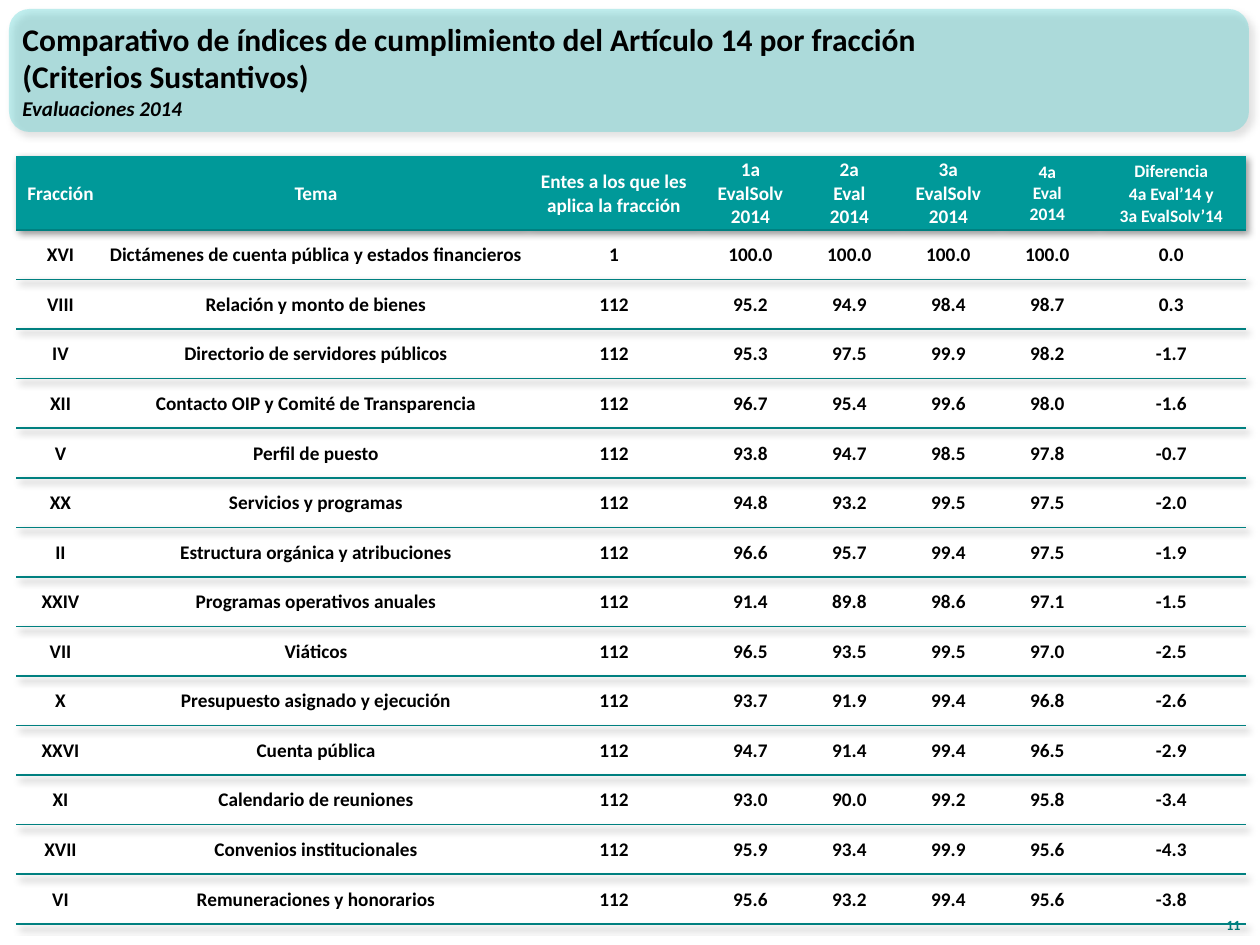
from dataclasses import dataclass

from lxml import etree
from pptx import Presentation
from pptx.dml.color import RGBColor
from pptx.enum.shapes import MSO_SHAPE
from pptx.enum.text import MSO_ANCHOR, PP_ALIGN
from pptx.oxml import parse_xml
from pptx.oxml.ns import nsdecls, qn
from pptx.util import Emu, Pt

SCALE = 914400 / 126  # EMU per px
FONT = "Calibri"
BLACK = RGBColor(0x00, 0x00, 0x00)
WHITE = RGBColor(0xFF, 0xFF, 0xFF)
AQUA = RGBColor(0x33, 0xCC, 0xCC)
TEAL = RGBColor(0x00, 0x99, 0x99)
DARK_TEAL = RGBColor(0x00, 0x80, 0x80)
LEFT, CENTER, RIGHT = PP_ALIGN.LEFT, PP_ALIGN.CENTER, PP_ALIGN.RIGHT
MIDDLE, BOTTOM = MSO_ANCHOR.MIDDLE, MSO_ANCHOR.BOTTOM
ROUND_RECT = MSO_SHAPE.ROUNDED_RECTANGLE
PLAIN_TABLE = "{2D5ABB26-0587-4C30-8999-92F81FD0307C}"


@dataclass(frozen=True)
class Column:
    header: str
    width: int
    size: int = 11
    inset: int = 1
    line_spacing: float | None = None


@dataclass(frozen=True)
class Line:
    text: str
    size: int
    italic: bool = False


COLUMNS = [
    Column("Fracción", 89),
    Column("Tema", 422),
    Column("Entes a los que les aplica la fracción", 174),
    Column("1a\vEvalSolv\v2014", 99),
    Column("2a\vEval\v2014", 99),
    Column("3a\vEvalSolv\v2014", 99),
    Column("4a\vEval\v2014", 99, size=10, inset=9),
    Column("Diferencia\n4a Eval’14 y\n3a EvalSolv’14", 149, size=10, line_spacing=1.07),
]
ROWS = [
    ("XVI", "Dictámenes de cuenta pública y estados financieros",
     "1", "100.0", "100.0", "100.0", "100.0", "0.0"),
    ("VIII", "Relación y monto de bienes", "112", "95.2", "94.9", "98.4", "98.7", "0.3"),
    ("IV", "Directorio de servidores públicos", "112", "95.3", "97.5", "99.9", "98.2", "-1.7"),
    ("XII", "Contacto OIP y Comité de Transparencia",
     "112", "96.7", "95.4", "99.6", "98.0", "-1.6"),
    ("V", "Perfil de puesto", "112", "93.8", "94.7", "98.5", "97.8", "-0.7"),
    ("XX", "Servicios y programas", "112", "94.8", "93.2", "99.5", "97.5", "-2.0"),
    ("II", "Estructura orgánica y atribuciones", "112", "96.6", "95.7", "99.4", "97.5", "-1.9"),
    ("XXIV", "Programas operativos anuales", "112", "91.4", "89.8", "98.6", "97.1", "-1.5"),
    ("VII", "Viáticos", "112", "96.5", "93.5", "99.5", "97.0", "-2.5"),
    ("X", "Presupuesto asignado y ejecución", "112", "93.7", "91.9", "99.4", "96.8", "-2.6"),
    ("XXVI", "Cuenta pública", "112", "94.7", "91.4", "99.4", "96.5", "-2.9"),
    ("XI", "Calendario de reuniones", "112", "93.0", "90.0", "99.2", "95.8", "-3.4"),
    ("XVII", "Convenios institucionales", "112", "95.9", "93.4", "99.9", "95.6", "-4.3"),
    ("VI", "Remuneraciones y honorarios", "112", "95.6", "93.2", "99.4", "95.6", "-3.8"),
]
TITLE = [
    Line("Comparativo de índices de cumplimiento del Artículo 14 por fracción", 18),
    Line("(Criterios Sustantivos)", 18),
    Line("Evaluaciones 2014", 12, italic=True),
]
HEADER_HEIGHT = 74
BODY_HEIGHT = 694


def px(n: int) -> Emu:
    return Emu(round(n * SCALE))


def outer_shadow():
    return parse_xml(
        f'<a:outerShdw {nsdecls("a")} blurRad="{Pt(4)}" dist="{Pt(3)}" dir="2700000" '
        'algn="tl" rotWithShape="0"><a:srgbClr val="000000"><a:alpha val="40000"/>'
        '</a:srgbClr></a:outerShdw>')


def style_paragraph(p, size: int, color: RGBColor, align, italic: bool = False) -> None:
    p.alignment = align
    p.font.name = FONT
    p.font.size = Pt(size)
    p.font.bold = True
    p.font.italic = italic
    p.font.color.rgb = color


def add_panel(slide) -> None:
    sp = slide.shapes.add_shape(ROUND_RECT, px(9), px(9), px(1240), px(123))
    sp.fill.solid()
    sp.fill.fore_color.rgb = AQUA
    color = sp.fill._xPr.find(qn("a:solidFill"))[0]
    etree.SubElement(color, qn("a:alpha"), val="30000")
    sp.line.fill.background()
    sp.shadow.inherit = False
    sp._element.spPr.find(qn("a:effectLst")).append(outer_shadow())


def add_text(slide, box: tuple[int, int, int, int], lines: list[Line],
             color: RGBColor, align, anchor) -> None:
    tf = slide.shapes.add_textbox(*map(px, box)).text_frame
    tf.word_wrap = True
    tf.vertical_anchor = anchor
    tf.text = "\n".join(line.text for line in lines)
    for p, line in zip(tf.paragraphs, lines):
        style_paragraph(p, line.size, color, align, line.italic)


def add_bottom_border(cell) -> None:
    border = parse_xml(
        f'<a:lnB {nsdecls("a")} w="{Pt(1)}"><a:solidFill>'
        f'<a:srgbClr val="{DARK_TEAL}"/></a:solidFill></a:lnB>')
    cell._tc.get_or_add_tcPr().insert(0, border)


def fill_cell(cell, text: str, size: int, color: RGBColor, inset: int = 1,
              line_spacing: float | None = None) -> None:
    cell.margin_left = cell.margin_right = px(inset)
    cell.margin_top, cell.margin_bottom = px(1), 0
    cell.vertical_anchor = MIDDLE
    cell.text_frame.text = text
    for p in cell.text_frame.paragraphs:
        style_paragraph(p, size, color, CENTER)
        if line_spacing:
            p.line_spacing = line_spacing
    add_bottom_border(cell)


def add_index_table(slide) -> None:
    width = sum(col.width for col in COLUMNS)
    frame = slide.shapes.add_table(len(ROWS) + 1, len(COLUMNS), px(16), px(156),
                                   px(width), px(HEADER_HEIGHT + BODY_HEIGHT))
    table = frame.table
    table.first_row = table.horz_banding = False
    tbl_pr = table._tbl.tblPr
    tbl_pr.find(qn("a:tableStyleId")).text = PLAIN_TABLE
    effects = etree.Element(qn("a:effectLst"))
    effects.append(outer_shadow())
    tbl_pr.insert(0, effects)

    for i, row in enumerate(table.rows):
        row.height = Emu(px(BODY_HEIGHT) // len(ROWS)) if i else px(HEADER_HEIGHT)
    for c, col in enumerate(COLUMNS):
        table.columns[c].width = px(col.width)
        head = table.cell(0, c)
        head.fill.solid()
        head.fill.fore_color.rgb = TEAL
        fill_cell(head, col.header, col.size, WHITE, col.inset, col.line_spacing)
        for r, values in enumerate(ROWS, start=1):
            cell = table.cell(r, c)
            cell.fill.background()
            fill_cell(cell, values[c], 11, BLACK)


def main() -> None:
    prs = Presentation()
    prs.slide_width, prs.slide_height = px(1260), px(945)
    slide = prs.slides.add_slide(prs.slide_layouts[6])
    add_panel(slide)
    add_text(slide, (1203, 890, 50, 50), [Line("11", 8)], DARK_TEAL, RIGHT, BOTTOM)
    add_index_table(slide)
    add_text(slide, (10, 11, 1155, 118), TITLE, BLACK, LEFT, MIDDLE)
    prs.save("out.pptx")


if __name__ == "__main__":
    main()
